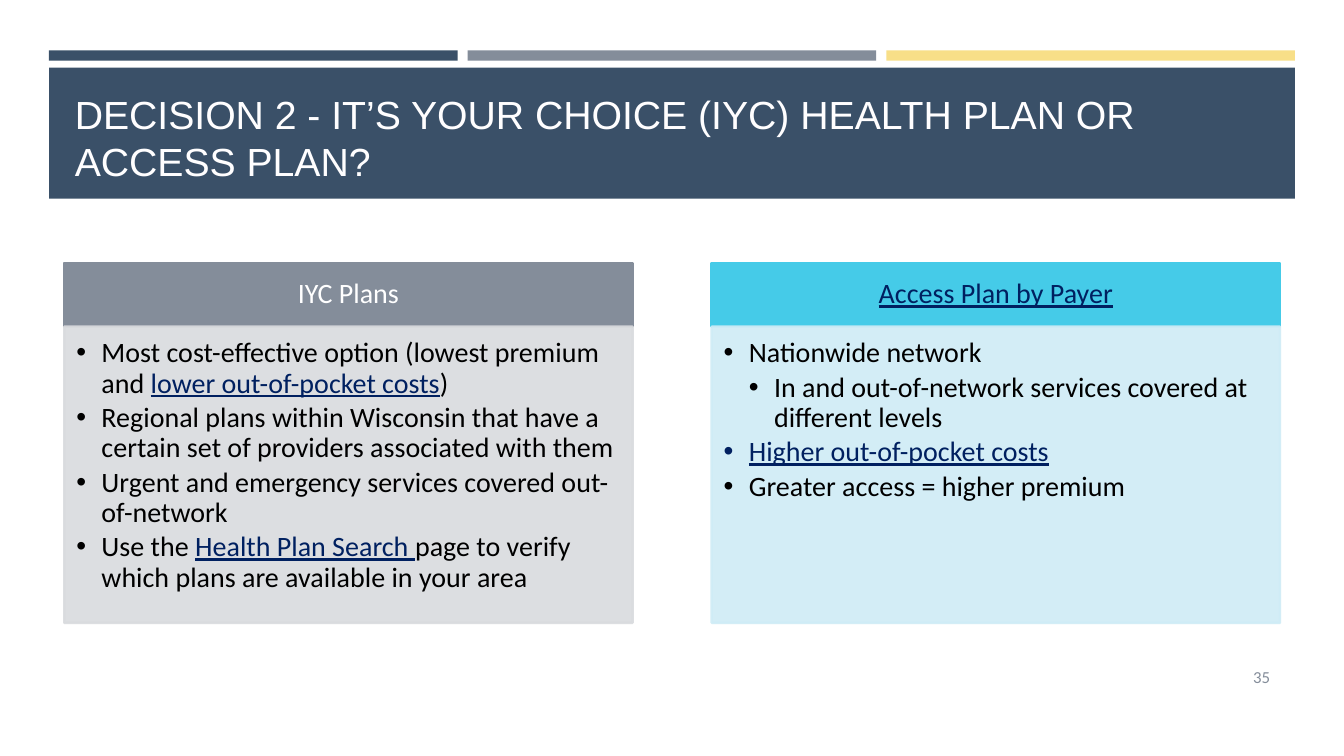
from lxml.etree import SubElement
from pptx import Presentation
from pptx.dml.color import RGBColor
from pptx.enum.shapes import MSO_SHAPE
from pptx.enum.text import MSO_ANCHOR, MSO_AUTO_SIZE, PP_ALIGN
from pptx.oxml.ns import qn
from pptx.util import Pt

COLORS = {
    "navy": "3A5068", "gray": "848D9A", "yellow": "F8DF88", "cyan": "45CBE8",
    "pale_gray": "D9DBDE", "pale_cyan": "CFECF6", "link": "002060",
    "title": "FFFEFF", "white": "FFFFFF", "black": "000000",
}

# Each bullet is (level, runs); each run is (text, is link)
IYC_BULLETS = [
    (0, [("Most cost-effective option (lowest premium and ", False),
         ("lower out-of-pocket costs", True), (")", False)]),
    (0, [("Regional plans within Wisconsin that have a certain set of "
          "providers associated with them", False)]),
    (0, [("Urgent and emergency services covered out-of-network", False)]),
    (0, [("Use the ", False), ("Health Plan Search ", True),
         ("page to verify which plans are available in your area", False)]),
]
ACCESS_BULLETS = [
    (0, [("Nationwide network", False)]),
    (1, [("In and out-of-network services covered at different levels", False)]),
    (0, [("Higher out-of-pocket costs", True)]),
    (0, [("Greater access = higher premium", False)]),
]


def rgb(name):
    return RGBColor.from_string(COLORS[name])


def add_run(paragraph, text, color, size=20, font="Calibri", underline=None):
    run = paragraph.add_run()
    run.text = text
    run.font.name = font
    run.font.size = Pt(size)
    run.font.color.rgb = rgb(color)
    run.font.underline = underline


def set_frame(frame, anchor, insets):
    frame.word_wrap = True
    frame.auto_size = MSO_AUTO_SIZE.NONE
    frame.vertical_anchor = anchor
    (frame.margin_left, frame.margin_top,
     frame.margin_right, frame.margin_bottom) = map(Pt, insets)


def add_rectangle(slide, box, color, outlined=False, opacity=None):
    shape = slide.shapes.add_shape(MSO_SHAPE.RECTANGLE, *map(Pt, box))
    shape.shadow.inherit = False
    shape.fill.solid()
    shape.fill.fore_color.rgb = rgb(color)
    if outlined:
        shape.line.color.rgb = rgb(color)
        shape.line.width = Pt(1.75)
    else:
        shape.line.fill.background()
    if opacity:
        for color_element in shape.element.spPr.iter(qn("a:srgbClr")):
            SubElement(color_element, qn("a:alpha"), val=str(opacity * 1000))
    return shape


def add_header(slide, box):
    left, top, width, height = box
    # Three accent bars
    gap, bar_height, band_offset = 7.2, 7.4, 12.4
    bar_width = (width - 2 * gap) / 3
    for index, color in enumerate(("navy", "gray", "yellow")):
        add_rectangle(slide, (left + index * (bar_width + gap), top,
                              bar_width, bar_height), color)
    # Band with the title in front of it
    band_top, band_height = top + band_offset, height - band_offset
    band = add_rectangle(slide, (left, band_top, width, band_height), "navy")
    title = slide.shapes.title
    band.element.addnext(title.element)
    title.left, title.top = Pt(left + 11.2), Pt(band_top + 7)
    title.width, title.height = Pt(width - 22.4), Pt(band_height - 13.8)
    set_frame(title.text_frame, MSO_ANCHOR.BOTTOM, (7.2, 3.6, 7.2, 3.6))
    paragraph = title.text_frame.paragraphs[0]
    paragraph.alignment = PP_ALIGN.LEFT
    add_run(paragraph, "DECISION 2 - IT’S YOUR CHOICE (IYC) HEALTH PLAN OR "
            "ACCESS PLAN?", "title", 28, "Arial")


def add_bullet(paragraph, level):
    paragraph.level = level
    properties = paragraph._p.get_or_add_pPr()
    properties.set("marL", str(Pt(18 * (level + 1))))
    properties.set("indent", str(-Pt(18)))
    paragraph.line_spacing = 0.9
    paragraph.space_after = Pt(3)
    SubElement(properties, qn("a:buFont"), typeface="Arial")
    SubElement(properties, qn("a:buChar"), char="•")


def add_plan(slide, box, heading, heading_is_link, bullets, color, pale_color):
    left, top, width, height = box
    heading_height = 45.4
    # Heading
    shape = add_rectangle(slide, (left, top, width, heading_height), color, True)
    set_frame(shape.text_frame, MSO_ANCHOR.MIDDLE, (11.5, 6.5, 11.5, 6.5))
    paragraph = shape.text_frame.paragraphs[0]
    paragraph.alignment = PP_ALIGN.CENTER
    paragraph.line_spacing = 0.9
    add_run(paragraph, heading, "link" if heading_is_link else "white",
            underline=heading_is_link or None)
    # Bullets
    shape = add_rectangle(slide, (left, top + heading_height, width,
                                  height - heading_height), pale_color, True, 90)
    frame = shape.text_frame
    set_frame(frame, MSO_ANCHOR.TOP, (8.6, 8.6, 11.5, 12.2))
    for index, (level, runs) in enumerate(bullets):
        paragraph = frame.add_paragraph() if index else frame.paragraphs[0]
        paragraph.alignment = PP_ALIGN.LEFT
        add_bullet(paragraph, level)
        for text, is_link in runs:
            add_run(paragraph, text, "link" if is_link else "black",
                    underline=is_link or None)


def add_slide_number(slide, box):
    frame = slide.shapes.add_textbox(*map(Pt, box)).text_frame
    set_frame(frame, MSO_ANCHOR.MIDDLE, (7.2, 3.6, 7.2, 3.6))
    paragraph = frame.paragraphs[0]
    paragraph.alignment = PP_ALIGN.RIGHT
    add_run(paragraph, "35", "gray", 12)


def main():
    presentation = Presentation()
    presentation.slide_width, presentation.slide_height = Pt(960), Pt(540)
    slide = presentation.slides.add_slide(presentation.slide_layouts[5])
    add_header(slide, (35, 36, 890, 106))
    add_plan(slide, (45.9, 187.9, 406, 257), "IYC Plans", False,
             IYC_BULLETS, "gray", "pale_gray")
    add_plan(slide, (508.3, 187.9, 406, 257), "Access Plan by Payer", True,
             ACCESS_BULLETS, "cyan", "pale_cyan")
    add_slide_number(slide, (831.6, 468.7, 82.8, 28.8))
    presentation.save("out.pptx")


if __name__ == "__main__":
    main()
